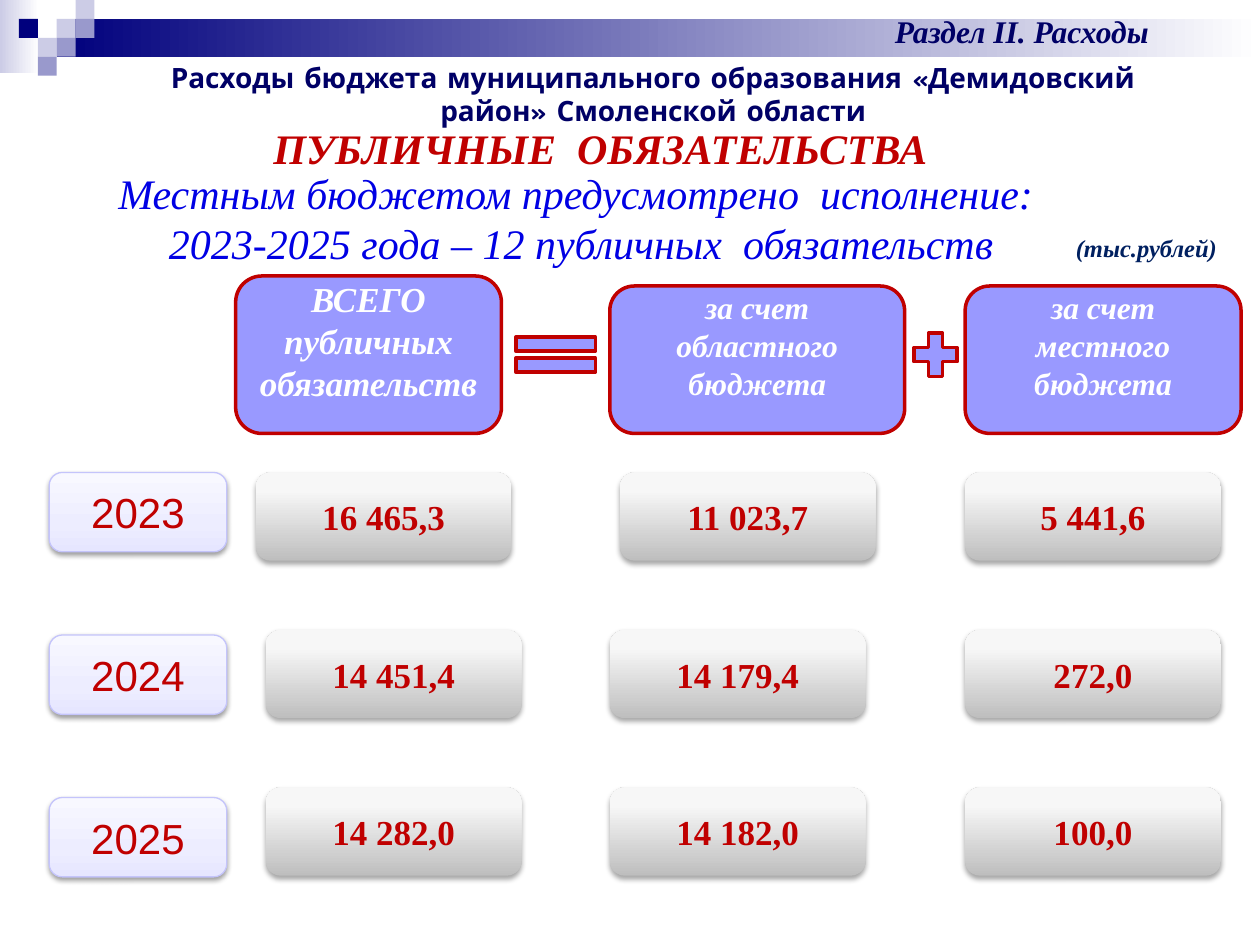
from lxml.etree import SubElement
from pptx import Presentation
from pptx.dml.color import RGBColor
from pptx.enum.shapes import MSO_SHAPE
from pptx.enum.text import MSO_ANCHOR, PP_ALIGN
from pptx.oxml.ns import qn
from pptx.util import Inches, Pt

WIDE, HIGH = Inches(10), Inches(7.5)
COLS, ROWS = 100, 75
SERIF = "Times New Roman"
RED, NAVY, LILAC = "C00000", "00007D", "9999FF"
GREY = [(0, "BEBEBE"), (80, "F7F7F7"), (100, "F8F8F8")]
PALE = [(0, "E6E6FF"), (35, "EDEDFF"), (100, "F8F8FF")]


def tint(code):
    return RGBColor.from_string(code)


def place(box, x, y, w, h):
    left, top = box[0] + x, box[1] + y
    return [round(n) for n in (left * WIDE / COLS, top * HIGH / ROWS,
                               w * WIDE / COLS, h * HIGH / ROWS)]


def write(shape, text, size=20, font=SERIF, color=RED, bold=True,
          slant=False, align=PP_ALIGN.CENTER, anchor=MSO_ANCHOR.MIDDLE,
          wrap=True, foot=0.05):
    frame = shape.text_frame
    frame.word_wrap = wrap
    frame.vertical_anchor = anchor
    frame.margin_bottom = Inches(foot)
    frame.text = text
    for para in frame.paragraphs:
        para.alignment = align
        for run in para.runs:
            run.font.size, run.font.name = Pt(size), font
            run.font.bold, run.font.italic = bold, slant
            run.font.color.rgb = tint(color)


def blend(shape, stops, angle):
    shape.fill.gradient()
    shape.fill.gradient_angle = angle
    group = shape.fill._fill._gradFill.find(qn("a:gsLst"))
    for stop in list(group):
        group.remove(stop)
    for spot, code in stops:
        stop = SubElement(group, qn("a:gs"), pos=str(spot * 1000))
        SubElement(stop, qn("a:srgbClr"), val=code)


def shade(shape, alpha, dist):
    group = shape._element.spPr.find(qn("a:effectLst"))
    cast = SubElement(group, qn("a:outerShdw"), blurRad=str(Pt(3.1)),
                      dist=str(Pt(dist)), dir="5400000", rotWithShape="0")
    color = SubElement(cast, qn("a:srgbClr"), val="000000")
    SubElement(color, qn("a:alpha"), val=str(alpha * 1000))


def draw(slide, kind, spot, fill, line=None, width=2, angle=90):
    shape = slide.shapes.add_shape(kind, *spot)
    shape.shadow.inherit = False
    if isinstance(fill, str):
        shape.fill.solid()
        shape.fill.fore_color.rgb = tint(fill)
    else:
        blend(shape, fill, angle)
    if line:
        shape.line.color.rgb = tint(line)
        shape.line.width = Pt(width)
    else:
        shape.line.fill.background()
    return shape


def label(slide, spot, text, **style):
    write(slide.shapes.add_textbox(*spot), text, anchor=MSO_ANCHOR.TOP, **style)


def banner(slide, box):
    unit = 1.5
    for spot, start in (((0, 0, 3.1, 5.8), "CCCCE6"),
                        ((4.5, unit, 95.5, 3), NAVY)):
        draw(slide, MSO_SHAPE.RECTANGLE, place(box, *spot),
             [(0, start), (100, "FFFFFF")], angle=0)
    tiles = {"CCCCE6": [(3, 1), (4, 0), (2, 2)],
             "9999CC": [(4, 1), (3, 2), (2, 3)], NAVY: [(1, 1)]}
    for color, cells in tiles.items():
        for col, row in cells:
            draw(slide, MSO_SHAPE.RECTANGLE,
                 place(box, col * unit, row * unit, unit, unit), color)
    label(slide, place(box, 62.6, 0.5, 37, 4), "Раздел II. Расходы",
          size=18, color="000066", slant=True)


def titles(slide, box):
    label(slide, place(box, 9.4, 0, 84.9, 3.7),
          "Расходы бюджета муниципального образования «Демидовский район» "
          "Смоленской области", size=16, font="Comic Neue", color="000066")
    label(slide, place(box, 8.6, 4.9, 78.1, 5), "ПУБЛИЧНЫЕ  ОБЯЗАТЕЛЬСТВА",
          size=24, slant=True)
    label(slide, place(box, 1.2, 8.5, 89.8, 9.1),
          "Местным бюджетом предусмотрено  исполнение: \n"
          "2023-2025 года – 12 публичных  обязательств",
          size=24, color="0000E4", bold=False, slant=True)
    label(slide, place(box, 84.4, 13.7, 13.3, 3.4), "(тыс.рублей)", size=14,
          color="002060", slant=True, align=PP_ALIGN.LEFT, wrap=False)


def heads(slide, box):
    cards = [((0, 0, 21.1, 12.5), "ВСЕГО\nпубличных\nобязательств", 20),
             ((29.7, 0.8, 23.4, 11.7), "за счет областного бюджета", 18),
             ((57.9, 0.8, 21.9, 11.7), "за счет местного\nбюджета", 18)]
    for spot, text, size in cards:
        card = draw(slide, MSO_SHAPE.ROUNDED_RECTANGLE, place(box, *spot),
                    LILAC, RED)
        write(card, text, size=size, color="FFFFFF", slant=True, foot=0.28)
    for sign, x, w in ((MSO_SHAPE.MATH_EQUAL, 21.1, 8.6),
                       (MSO_SHAPE.MATH_PLUS, 53.2, 4.7)):
        draw(slide, sign, place(box, x, 3.9, w, 4.7), LILAC, RED)


def years(slide, box):
    step = box[3] / 3
    for row, year in enumerate(("2023", "2024", "2025")):
        card = draw(slide, MSO_SHAPE.ROUNDED_RECTANGLE,
                    place(box, 0, row * step, 14.1, 6.3), PALE, "C4C4FB", 0.75)
        shade(card, 38, 1.6)
        write(card, year, size=24, font="Arial", bold=False)


def sums(slide, box):
    first, rest = (0, 28.9, 56.3), (0.8, 28.1, 56.3)
    rows = [(first, ("16 465,3", "11 023,7", "5 441,6")),
            (rest, ("14 451,4", "14 179,4", "272,0")),
            (rest, ("14 282,0", "14 182,0", "100,0"))]
    step = box[3] / len(rows)
    for row, (lefts, texts) in enumerate(rows):
        for left, text in zip(lefts, texts):
            card = draw(slide, MSO_SHAPE.ROUNDED_RECTANGLE,
                        place(box, left, row * step, 20.3, 7), GREY)
            shade(card, 35, 1.8)
            write(card, text)


def main():
    deck = Presentation()
    deck.slide_width, deck.slide_height = WIDE, HIGH
    slide = deck.slides.add_slide(deck.slide_layouts[6])
    banner(slide, (0, 0, 100, 6))
    titles(slide, (0, 4.3, 100, 17.6))
    heads(slide, (18.7, 21.9, 79.8, 12.5))
    years(slide, (3.9, 37.5, 14.1, 38.7))
    sums(slide, (20.3, 37.5, 76.6, 37.5))
    deck.save("out.pptx")


if __name__ == "__main__":
    main()
